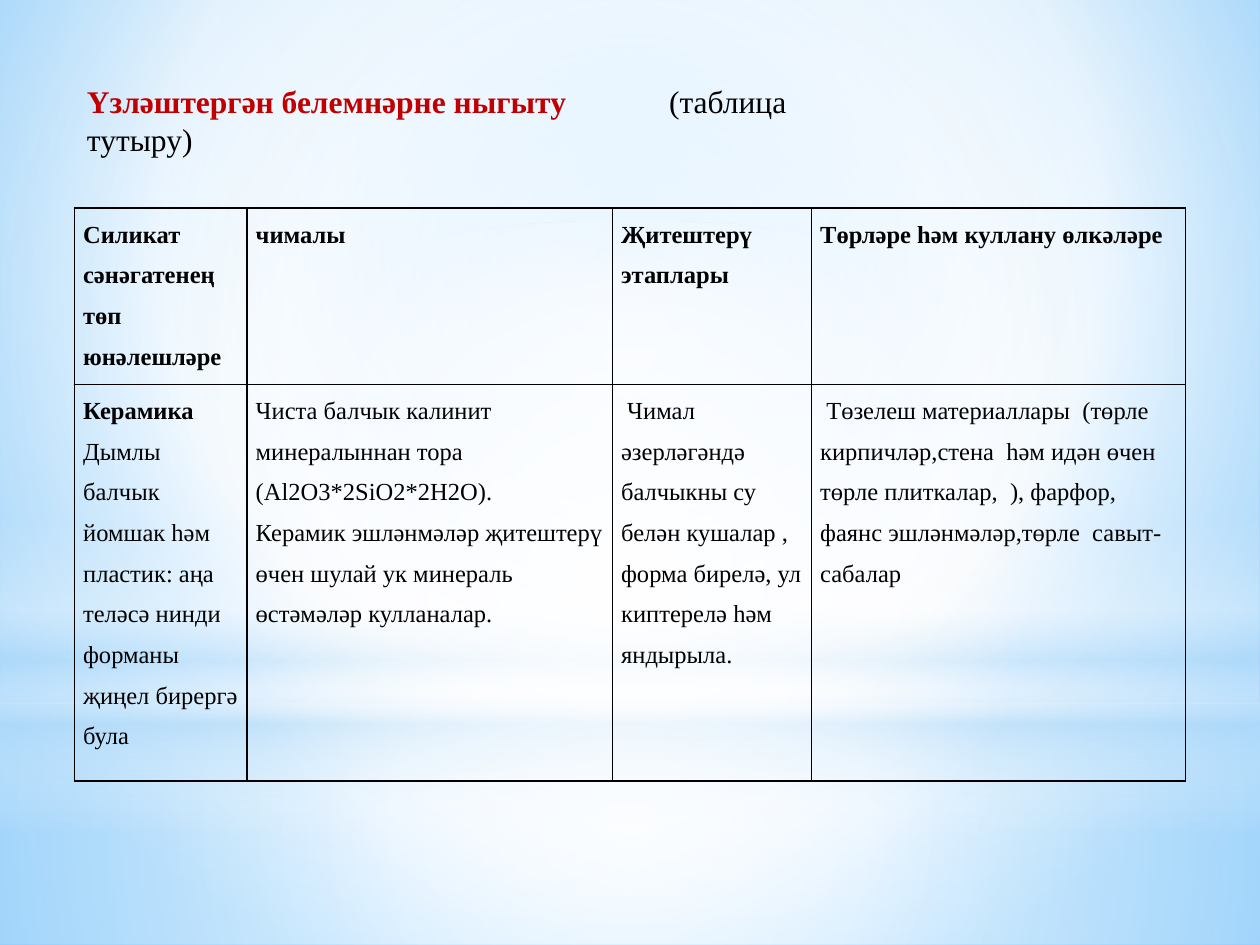
from lxml import etree
from pptx import Presentation
from pptx import util as u
from pptx.dml.color import RGBColor
from pptx.enum import shapes, text
from pptx.oxml import ns, parse_xml

W, H = 10, 7.5
FONT = "Times New Roman"
BLACK, RED = "000000", "C00000"
WHITE, SKY = "FFFFFF", "B4DCFA"
MID = (50, 50, 50, 50)

# Soft light areas: shape, top and height, stops (place, colour, opacity), centre
BANDS = [
    ("RECTANGLE", 5.58, 1.92,
     [(0, WHITE, 91), (37, WHITE, 76), (100, SKY, 79)], MID),
    ("RECTANGLE", 0, 5.58,
     [(0, WHITE, 89), (48, WHITE, 62), (100, SKY, 79)], MID),
    ("RECTANGLE", 4.12, 2.5,
     [(0, WHITE, 0), (29, WHITE, 30), (45, SKY, 40), (55, WHITE, 26),
      (65, SKY, 60), (100, WHITE, 0)], None),
    ("OVAL", 1.75, 5.58, [(0, WHITE, 100), (56, WHITE, 0)], MID),
]
BACK = [(0, "9ED5FF", 100), (60, WHITE, 100), (100, "5BB9FF", 100)]

# Table: each cell is a list of (paragraph, bold)
COLS = [1.37, 2.9, 1.58, 2.97]
ROWS = [1.4, 3.15]
HEADS = ["Силикат сәнәгатенең төп юнәлешләре", "чималы",
         "Җитештерү этаплары", "Төрләре һәм куллану өлкәләре"]
CELLS = [
    [[(head, True)] for head in HEADS],
    [
        [("Керамика", True),
         ("Дымлы балчык йомшак һәм пластик: аңа теләсә нинди форманы  "
          "җиңел бирергә була", False)],
        [("Чиста балчык калинит минералыннан тора (Al2O3*2SiO2*2H2O).", False),
         ("Керамик эшләнмәләр җитештерү өчен шулай ук минераль өстәмәләр "
          "кулланалар.", False)],
        [(" Чимал әзерләгәндә балчыкны су белән кушалар , форма бирелә, "
          "ул киптерелә һәм яндырыла.", False)],
        [(" Төзелеш материаллары  (төрле кирпичләр,стена  һәм идән өчен "
          "төрле плиткалар,  ), фарфор, фаянс эшләнмәләр,төрле  "
          "савыт-сабалар", False)],
    ],
]


def color(code):
    return RGBColor.from_string(code)


def style(run, size, code, bold):
    font = run.font
    font.name, font.size, font.bold = FONT, u.Pt(size), bold
    font.color.rgb = color(code)


def blend(host, stops, focus):
    """Swap the solid fill of host for a gradient; no focus means downward."""
    marks = "".join(
        f'<a:gs pos="{pos * 1000}"><a:srgbClr val="{code}">'
        f'<a:alpha val="{alpha * 1000}"/></a:srgbClr></a:gs>'
        for pos, code, alpha in stops)
    if focus:
        sides = " ".join(f'{side}="{share * 1000}"'
                         for side, share in zip("ltrb", focus))
        way = f'<a:path path="circle"><a:fillToRect {sides}/></a:path>'
    else:
        way = '<a:lin ang="5400000" scaled="0"/>'
    fill = parse_xml(f'<a:gradFill {ns.nsdecls("a")} rotWithShape="1">'
                     f'<a:gsLst>{marks}</a:gsLst>{way}</a:gradFill>')
    host.replace(host.find(ns.qn("a:solidFill")), fill)


def backdrop(slide):
    slide.background.fill.solid()
    blend(slide.element.xpath(".//p:bgPr")[0], BACK, (20, 10, 20, 60))
    for kind, top, height, stops, focus in BANDS:
        band = slide.shapes.add_shape(
            getattr(shapes.MSO_SHAPE, kind), 0, u.Inches(top),
            u.Inches(W), u.Inches(height))
        band.shadow.inherit = False
        band.line.fill.background()
        band.fill.solid()
        blend(band.element.spPr, stops, focus)


def heading(slide):
    title = slide.shapes.title
    title.left, title.top = u.Inches(0.59), u.Inches(0.6)
    title.width, title.height = u.Inches(6.54), u.Inches(0.71)
    title.element.getparent().append(title.element)  # in front of the bands
    frame = title.text_frame
    frame.word_wrap = True
    frame.auto_size = text.MSO_AUTO_SIZE.NONE
    frame.vertical_anchor = text.MSO_ANCHOR.TOP
    par = frame.paragraphs[0]
    par.alignment = text.PP_ALIGN.LEFT
    for words, code, bold in (("Үзләштергән белемнәрне ныгыту\t", RED, True),
                              ("(таблица тутыру)", BLACK, False)):
        run = par.add_run()
        run.text = words
        style(run, 18, code, bold)
    # The second part starts at a tab stop
    tabs = etree.SubElement(par.runs[0].font._element.getparent().getparent()
                            .get_or_add_pPr(), ns.qn("a:tabLst"))
    etree.SubElement(tabs, ns.qn("a:tab"), pos=str(u.Inches(4.62)), algn="l")


def border(cell):
    props = cell._tc.get_or_add_tcPr()
    for spot, side in enumerate("LRTB"):
        props.insert(spot, parse_xml(
            f'<a:ln{side} {ns.nsdecls("a")} w="{u.Pt(1)}"><a:solidFill>'
            f'<a:srgbClr val="{BLACK}"/></a:solidFill></a:ln{side}>'))


def write(cell, pars):
    cell.margin_left = cell.margin_right = u.Inches(0.07)
    cell.margin_top = cell.margin_bottom = 0
    cell.fill.background()
    border(cell)
    frame = cell.text_frame
    frame.text = "\n".join(words for words, _ in pars)
    for par, (_, bold) in zip(frame.paragraphs, pars):
        par.line_spacing = 1.5
        style(par.runs[0], 14, BLACK, bold)


def grid(slide):
    table = slide.shapes.add_table(
        len(ROWS), len(COLS), u.Inches(0.59), u.Inches(1.65),
        u.Inches(sum(COLS)), u.Inches(sum(ROWS))).table
    table.first_row = table.horz_banding = False
    for col, width in zip(table.columns, COLS):
        col.width = u.Inches(width)
    for row, height, line in zip(table.rows, ROWS, CELLS):
        row.height = u.Inches(height)
        for cell, pars in zip(row.cells, line):
            write(cell, pars)


def main():
    deck = Presentation()
    deck.slide_width, deck.slide_height = u.Inches(W), u.Inches(H)
    slide = deck.slides.add_slide(deck.slide_layouts[5])  # title only
    backdrop(slide)
    heading(slide)
    grid(slide)
    deck.save("out.pptx")


if __name__ == "__main__":
    main()
